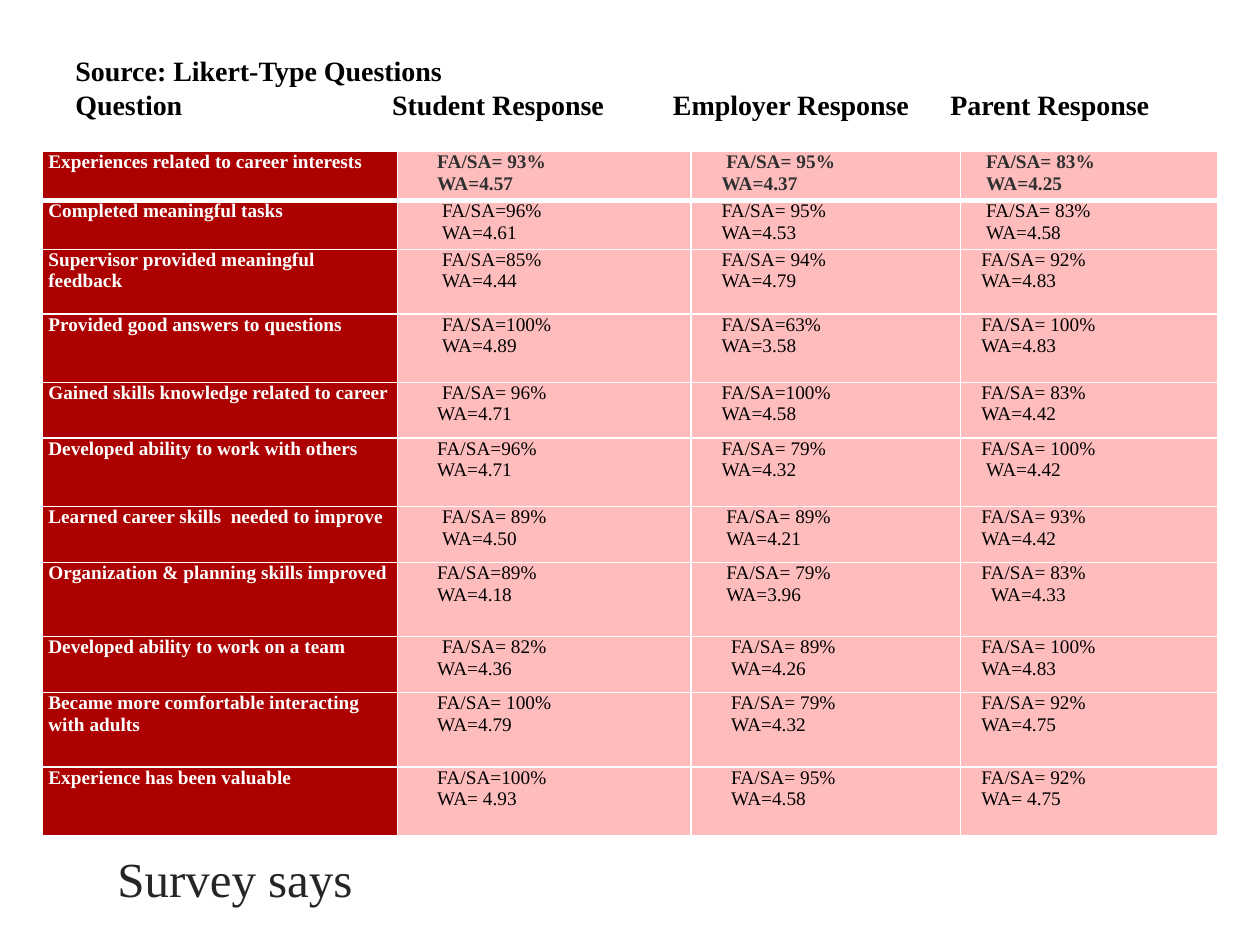
from lxml.etree import SubElement
from pptx import Presentation
from pptx.dml.color import RGBColor
from pptx.enum.text import MSO_ANCHOR
from pptx.oxml.ns import qn
from pptx.util import Pt

MIDDLE, BOTTOM = MSO_ANCHOR.MIDDLE, MSO_ANCHOR.BOTTOM
WHITE = RGBColor(0xFF, 0xFF, 0xFF)
BLACK = RGBColor(0, 0, 0)
RED = RGBColor(0xAD, 0x01, 0x01)
PINK = RGBColor(0xFF, 0xBC, 0xBC)
GREY = RGBColor(0x30, 0x30, 0x30)
DARK = RGBColor(0x26, 0x26, 0x26)
FONT = "Times New Roman"
STEP = 2.75
WIDTHS = [203, 168, 154, 147]
STOPS = [181, 341.5, 500]
HEADS = ["Question", "Student Response", "Employer Response", "Parent Response"]
ROWS = [
    (28, "Experiences related to career interests",
     ("= 93%", "=4.57", 7, 7), ("= 95%", "=4.37", 6, 5), ("= 83%", "=4.25", 4, 4)),
    (28, "Completed meaningful tasks",
     ("=96%", "=4.61", 8, 8), ("= 95%", "=4.53", 5, 5), ("= 83%", "=4.58", 4, 4)),
    (37, "Supervisor provided meaningful feedback",
     ("=85%", "=4.44", 8, 8), ("= 94%", "=4.79", 5, 5), ("= 92%", "=4.83", 3, 3)),
    (39, "Provided good answers to questions",
     ("=100%", "=4.89", 8, 8), ("=63%", "=3.58", 5, 5), ("= 100%", "=4.83", 3, 3)),
    (32, "Gained skills knowledge related to career",
     ("= 96%", "=4.71", 8, 7), ("=100%", "=4.58", 5, 5), ("= 83%", "=4.42", 3, 3)),
    (39, "Developed ability to work with others",
     ("=96%", "=4.71", 7, 7), ("= 79%", "=4.32", 5, 5), ("= 100%", "=4.42", 3, 4)),
    (32, "Learned career skills  needed to improve",
     ("= 89%", "=4.50", 8, 8), ("= 89%", "=4.21", 6, 6), ("= 93%", "=4.42", 3, 3)),
    (42.5, "Organization & planning skills improved",
     ("=89%", "=4.18", 7, 7), ("= 79%", "=3.96", 6, 6), ("= 83%", "=4.33", 3, 5)),
    (32, "Developed ability to work on a team",
     ("= 82%", "=4.36", 8, 7), ("= 89%", "=4.26", 7, 7), ("= 100%", "=4.83", 3, 3)),
    (42.5, "Became more comfortable interacting with adults",
     ("= 100%", "=4.79", 7, 7), ("= 79%", "=4.32", 7, 7), ("= 92%", "=4.75", 3, 3)),
    (39, "Experience has been valuable",
     ("=100%", "= 4.93", 7, 7), ("= 95%", "=4.58", 7, 7), ("= 92%", "= 4.75", 3, 3)),
]


class Deck:
    """Holds the font and the current slide, and draws each kind of element."""

    def __init__(self, font):
        self.font = font
        self.deck = Presentation()
        self.deck.slide_width, self.deck.slide_height = Pt(720), Pt(540)
        self.slide = self.deck.slides.add_slide(self.deck.slide_layouts[6])

    def style(self, para, size, color, bold):
        font = para.font
        font.name, font.size, font.bold = self.font, Pt(size), bold
        font.color.rgb = color

    def text(self, box, lines, size, color, bold=False, anchor=MIDDLE, foot=3.6, stops=()):
        frame = self.slide.shapes.add_textbox(*map(Pt, box)).text_frame
        frame.word_wrap = True
        frame.vertical_anchor = anchor
        frame.margin_bottom = Pt(foot)
        frame.text = "\n".join(lines)
        for para in frame.paragraphs:
            self.style(para, size, color, bold)
            if stops:
                tabs = SubElement(para._p.get_or_add_pPr(), qn("a:tabLst"))
                para._p.pPr.insert(0, tabs)
                for stop in stops:
                    SubElement(tabs, qn("a:tab"), pos=str(Pt(stop)), algn="l")

    def border(self, cell, top, bottom):
        props = cell._tc.get_or_add_tcPr()
        for side, width in (("L", 1), ("R", 1), ("T", top), ("B", bottom)):
            line = SubElement(props, qn("a:ln" + side), w=str(Pt(width)))
            fill = SubElement(line, qn("a:solidFill"))
            SubElement(fill, qn("a:srgbClr"), val=str(WHITE))

    def cell(self, cell, lines, pads, back, color, bold, edges):
        self.border(cell, *edges)
        cell.fill.solid()
        cell.fill.fore_color.rgb = back
        cell.margin_left = cell.margin_right = Pt(3.6)
        cell.margin_top = cell.margin_bottom = 0
        cell.text_frame.text = "\n".join(lines)
        for para, pad in zip(cell.text_frame.paragraphs, pads):
            self.style(para, 11, color, bold)
            para._p.get_or_add_pPr().set("marL", str(Pt(pad * STEP)))

    def table(self, left, top, widths, rows):
        high = sum(row[0] for row in rows)
        box = map(Pt, (left, top, sum(widths), high))
        grid = self.slide.shapes.add_table(len(rows), len(widths), *box).table
        grid.first_row = grid.horz_banding = False
        for col, width in zip(grid.columns, widths):
            col.width = Pt(width)
        for r, (height, label, *scores) in enumerate(rows):
            first = r == 0
            edges = (3 if r == 1 else 1, 3 if first else 1)
            grid.rows[r].height = Pt(height)
            self.cell(grid.cell(r, 0), [label], [0], RED, WHITE, True, edges)
            for c, (share, mean, *pads) in enumerate(scores, 1):
                lines = ["FA/SA" + share, "WA" + mean]
                color = GREY if first else BLACK
                self.cell(grid.cell(r, c), lines, pads, PINK, color, first, edges)

    def save(self):
        self.deck.save("out.pptx")


def main():
    deck = Deck(FONT)
    deck.text((60, 474, 534, 48), ["Survey says"], 28, DARK, anchor=BOTTOM)
    deck.table(24, 86.5, WIDTHS, ROWS)
    deck.text((36, 26, 634, 68), ["Source: Likert-Type Questions", "\t".join(HEADS)],
              16, BLACK, True, foot=24, stops=STOPS)
    deck.save()


if __name__ == "__main__":
    main()
